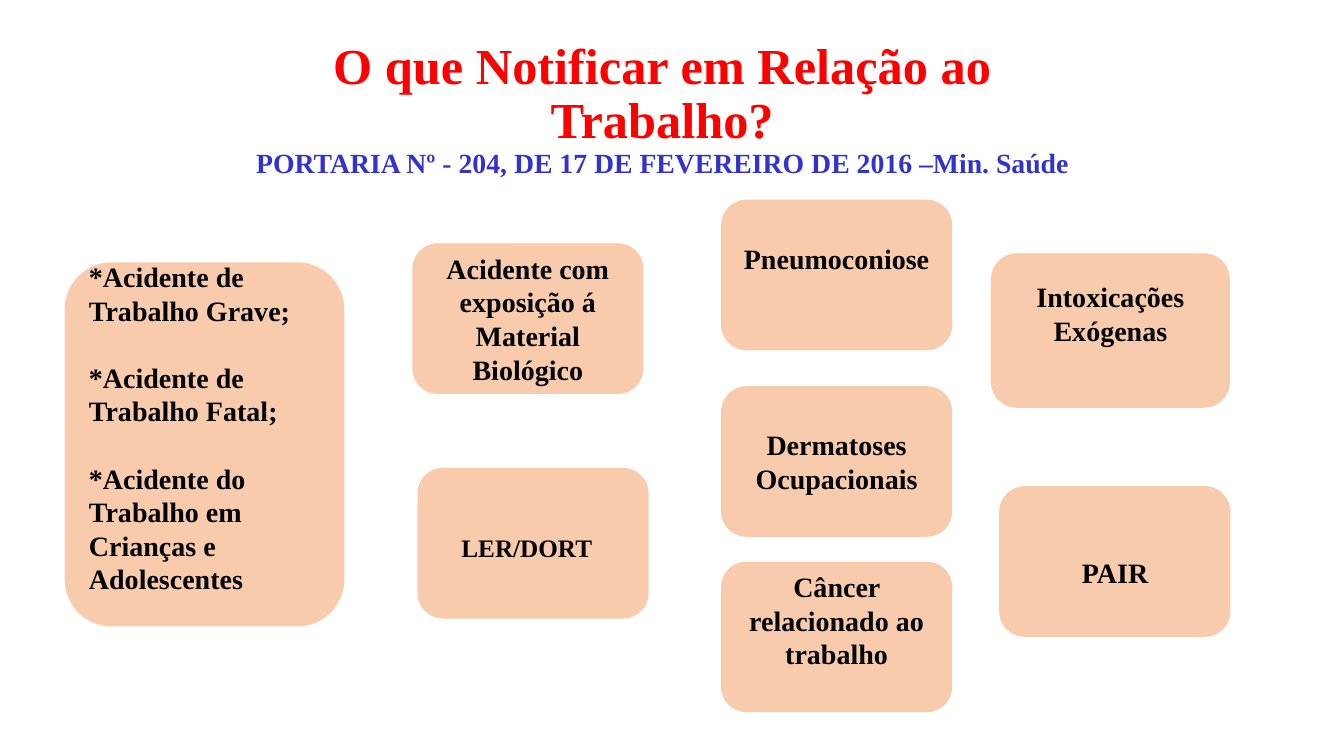
from pptx import Presentation
from pptx.dml.color import RGBColor
from pptx.enum.shapes import MSO_SHAPE
from pptx.enum.text import MSO_ANCHOR, MSO_AUTO_SIZE, PP_ALIGN
from pptx.util import Cm, Pt

RED = RGBColor(0xFF, 0x00, 0x00)
BLUE = RGBColor(0x33, 0x33, 0xCC)
PEACH = RGBColor(0xF8, 0xCB, 0xAD)
BLACK = RGBColor(0x00, 0x00, 0x00)
FONT = "Times New Roman"

CARD_W, CARD_H = 5.79, 3.76
MARGIN = 0.13
RAISED = MARGIN + 0.85  # bottom inset that lifts the text by half a line


def add_run(paragraph, text, size, color=BLACK):
    run = paragraph.add_run()
    run.text = text
    run.font.name = FONT
    run.font.size = Pt(size)
    run.font.bold = True
    run.font.color.rgb = color


def add_heading(slide, box):
    heading = slide.shapes.title
    heading.left, heading.top, heading.width, heading.height = map(Cm, box)
    frame = heading.text_frame
    frame.word_wrap = True
    frame.auto_size = MSO_AUTO_SIZE.NONE
    frame.vertical_anchor = MSO_ANCHOR.MIDDLE
    paragraph = frame.paragraphs[0]
    paragraph.alignment = PP_ALIGN.CENTER
    paragraph.line_spacing = 0.9
    add_run(paragraph, "O que Notificar em Relação ao Trabalho?", 36, RED)
    paragraph.add_line_break()
    add_run(paragraph, "PORTARIA Nº - 204, DE 17 DE FEVEREIRO DE 2016 –Min. Saúde", 19.8, BLUE)


def add_panel(slide, kind, box, line_width=1):
    panel = slide.shapes.add_shape(kind, *map(Cm, box))
    panel.shadow.inherit = False
    panel.fill.solid()
    panel.fill.fore_color.rgb = PEACH
    panel.line.color.rgb = PEACH
    panel.line.width = Pt(line_width)
    return panel


def add_card(slide, box, items=(), align=PP_ALIGN.CENTER, bottom=MARGIN):
    """Rounded card with one paragraph per item, a line apart."""
    frame = add_panel(slide, MSO_SHAPE.ROUNDED_RECTANGLE, box).text_frame
    frame.word_wrap = True
    frame.vertical_anchor = MSO_ANCHOR.MIDDLE
    frame.margin_bottom = Cm(bottom)
    for index, item in enumerate(items):
        paragraph = frame.add_paragraph() if index else frame.paragraphs[0]
        paragraph.alignment = align
        if index:
            paragraph.space_before = Pt(24)
        add_run(paragraph, item, 20)


def add_pair_card(slide, box):
    left, top = box[:2]
    add_card(slide, box)
    label = add_panel(slide, MSO_SHAPE.RECTANGLE, (left + 0.48, top + 1.6, 4.85, 1.12), 0.75)
    frame = label.text_frame
    frame.word_wrap = True
    frame.vertical_anchor = MSO_ANCHOR.TOP
    frame.paragraphs[0].alignment = PP_ALIGN.CENTER
    add_run(frame.paragraphs[0], "PAIR", 20)


def add_ler_card(slide, box):
    left, top = box[:2]
    add_card(slide, box)
    label = slide.shapes.add_textbox(*map(Cm, (left + 0.84, top + 1.47, 3.86, 1.02)))
    label.text_frame.word_wrap = True
    add_run(label.text_frame.paragraphs[0], "LER/DORT", 18)


def add_notification_slide(prs):
    slide = prs.slides.add_slide(prs.slide_layouts[5])
    add_heading(slide, (5.49, 0.89, 22.4, 3.76))

    # Work accidents
    accidents = (
        "*Acidente de Trabalho Grave;",
        "*Acidente de Trabalho Fatal;",
        "*Acidente do Trabalho em Crianças e Adolescentes",
    )
    add_card(slide, (1.65, 6.63, 7.01, 9.14), accidents, PP_ALIGN.LEFT, RAISED)

    # Diseases and exposures
    conditions = (
        ("Acidente com exposição á Material Biológico", 10.41, 6.15, CARD_W, CARD_H, MARGIN),
        ("Pneumoconiose", 18.19, 5.05, CARD_W, CARD_H, RAISED),
        ("Dermatoses Ocupacionais", 18.19, 9.75, CARD_W, CARD_H, MARGIN),
        ("Câncer relacionado ao trabalho", 18.19, 14.17, CARD_W, CARD_H, RAISED),
        ("Intoxicações Exógenas", 24.99, 6.4, 5.99, 3.86, RAISED),
    )
    for condition, left, top, width, height, bottom in conditions:
        add_card(slide, (left, top, width, height), (condition,), bottom=bottom)

    # Cards with a separate label
    add_ler_card(slide, (10.54, 11.81, CARD_W, CARD_H))
    add_pair_card(slide, (25.2, 12.27, CARD_W, CARD_H))


def main():
    prs = Presentation()
    prs.slide_width, prs.slide_height = Cm(33.87), Cm(19.05)
    add_notification_slide(prs)
    prs.save("out.pptx")


if __name__ == "__main__":
    main()
